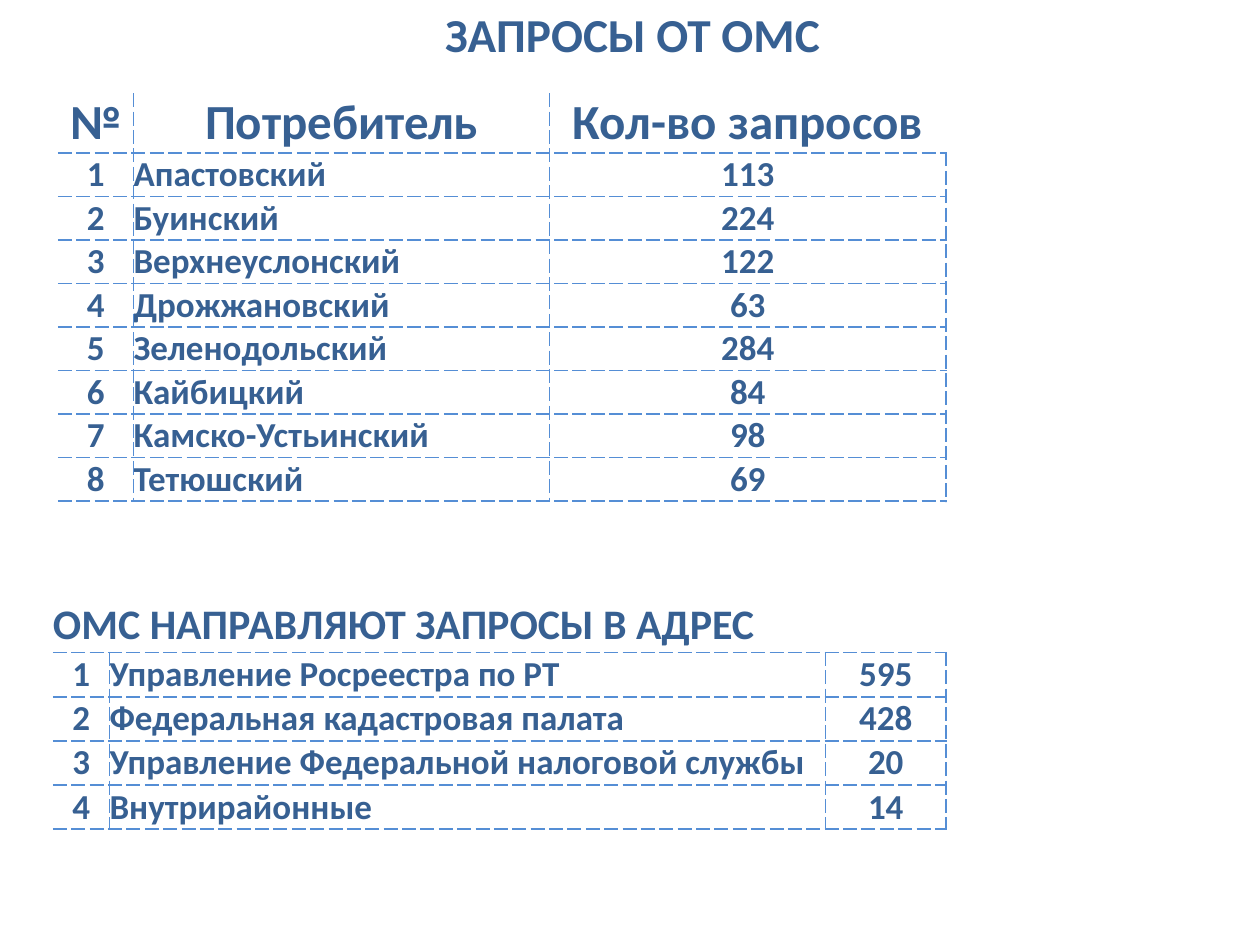
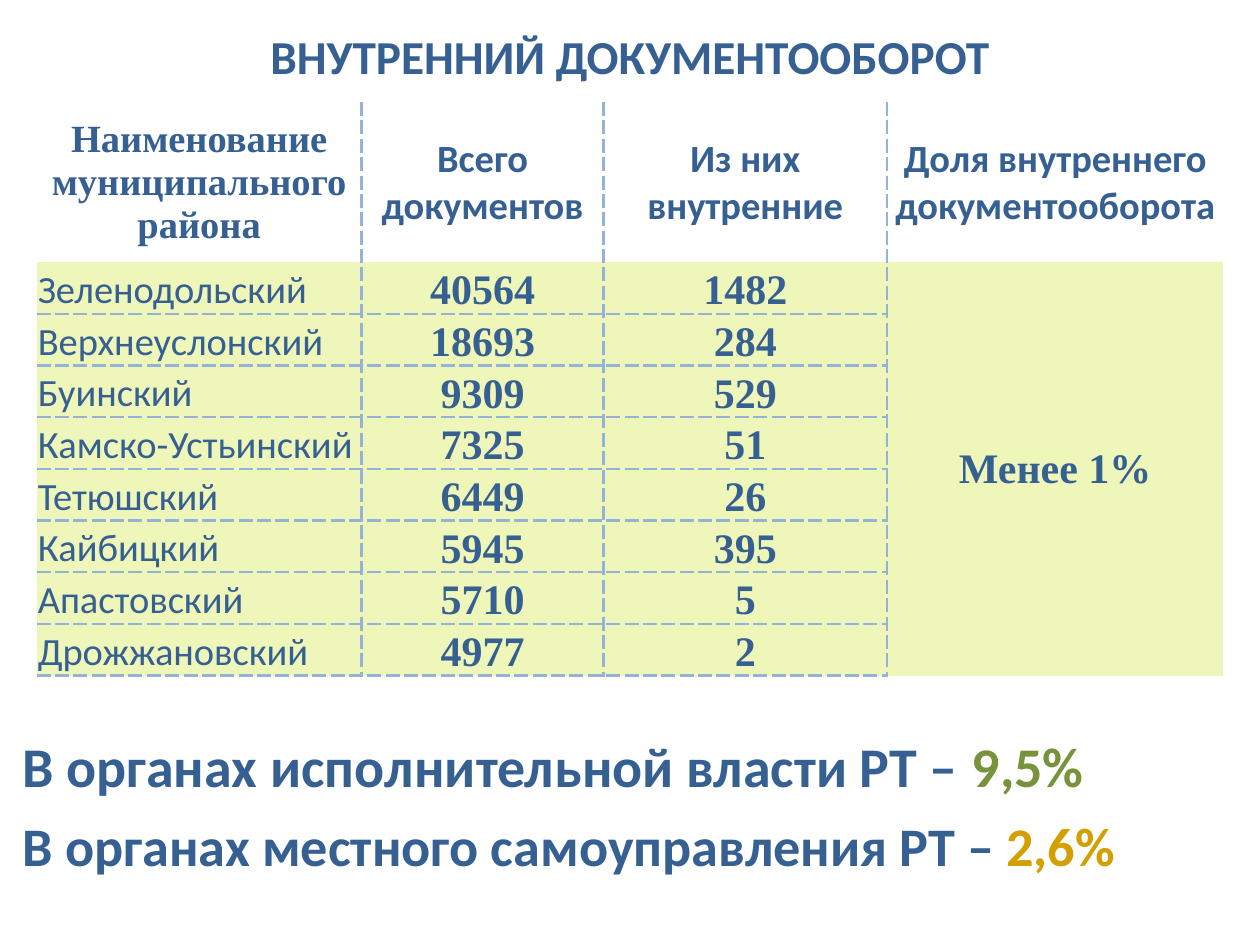
"""Two slides of municipal request and document-flow tables."""
from lxml.etree import SubElement
from pptx import Presentation
from pptx.dml.color import RGBColor as RGB
from pptx.enum.text import MSO_ANCHOR as ANCHOR, MSO_AUTO_SIZE as AUTO, PP_ALIGN as ALIGN
from pptx.oxml.ns import qn
from pptx.util import Inches, Pt

COLORS = {
    "ink": "376092", "district": "366092", "green": "77933C", "gold": "D2A000",
    "bright_rule": "558ED5", "soft_rule": "95B3D7", "white": "FFFFFF", "lime": "EEF7B9",
}
PLAIN_STYLE = "{2D5ABB26-0587-4C30-8999-92F81FD0307C}"


def write(frame, text, size=20, font="Calibri", color="ink", bold=True, align=ALIGN.LEFT):
    paragraph = frame.paragraphs[0]
    paragraph.alignment = align
    run = paragraph.add_run()
    run.text = text
    run.font.size, run.font.name, run.font.bold = Pt(size), font, bold
    run.font.color.rgb = RGB.from_string(COLORS[color])


def add_grid(slide, left, top, widths, heights, rows, formats, edges, rule, weight,
             inset=0, body_anchor=ANCHOR.MIDDLE, fills=None, merge=None):
    frame = slide.shapes.add_table(len(rows), len(widths), Inches(left), Inches(top),
                                   Inches(sum(widths)), Inches(sum(heights)))
    table = frame.table
    table.first_row = table.horz_banding = False
    table._tbl.tblPr.find(qn("a:tableStyleId")).text = PLAIN_STYLE
    for column, width in zip(table.columns, widths):
        column.width = Inches(width)
    for row, height in zip(table.rows, heights):
        row.height = Inches(height)
    if merge:
        first, last = merge
        table.cell(*first).merge(table.cell(*last))
    for r, values in enumerate(rows):
        for c, value in enumerate(values):
            cell = table.cell(r, c)
            cell.margin_left = cell.margin_top = cell.margin_right = Inches(inset)
            cell.margin_bottom = 0
            merged = cell.is_merge_origin or r == 0
            cell.vertical_anchor = ANCHOR.MIDDLE if merged else body_anchor
            for edge in edges(r, c):
                line = SubElement(cell._tc.get_or_add_tcPr(), qn(f"a:ln{edge}"), w=str(Pt(weight)))
                SubElement(SubElement(line, qn("a:solidFill")), qn("a:srgbClr"), val=COLORS[rule])
                SubElement(line, qn("a:prstDash"), val="sysDash")
            if fills:
                cell.fill.solid()
                cell.fill.fore_color.rgb = RGB.from_string(COLORS[fills[r > 0]])
            else:
                cell.fill.background()
            if not cell.is_spanned:
                write(cell.text_frame, value, **formats[r > 0][c])


deck = Presentation()
deck.slide_width, deck.slide_height = Inches(10), Inches(7.5)
requests, turnover = [deck.slides.add_slide(deck.slide_layouts[6]) for _ in range(2)]

centered = {"align": ALIGN.CENTER}
heading = {"size": 28, **centered}
consumers = [("Апастовский", 113), ("Буинский", 224), ("Верхнеуслонский", 122),
             ("Дрожжановский", 63), ("Зеленодольский", 284), ("Кайбицкий", 84),
             ("Камско-Устьинский", 98), ("Тетюшский", 69)]
add_grid(
    requests, 0.46, 0.74, [0.6, 3.3, 3.15], [0.47] + [2.76 / 8] * 8,
    [("№", "Потребитель", "Кол-во запросов")]
    + [(str(n), name, str(count)) for n, (name, count) in enumerate(consumers, 1)],
    [[heading] * 3, [centered, {"align": ALIGN.JUSTIFY}, centered]],
    lambda r, c: "L" * (c > 0) + "R" * (r > 0 or c < 2) + "T" * (r > 0) + "B",
    "bright_rule", 1)

addressees = [("Управление Росреестра по РТ", 595), ("Федеральная кадастровая палата", 428),
              ("Управление Федеральной налоговой службы", 20), ("Внутрирайонные", 14)]
add_grid(
    requests, 0.42, 4.75, [0.45, 5.68, 0.96], [0.43] + [0.35] * 4,
    [("ОМС НАПРАВЛЯЮТ ЗАПРОСЫ В АДРЕС", "", "")]
    + [(str(n), name, str(count)) for n, (name, count) in enumerate(addressees, 1)],
    [[{"size": 24}] * 3, [centered, {}, centered]],
    lambda r, c: ("L" * (c > 0) + "RTB") if r else "B",
    "bright_rule", 1, merge=((0, 0), (0, 2)))

documents = [("Зеленодольский", 40564, 1482), ("Верхнеуслонский", 18693, 284),
             ("Буинский", 9309, 529), ("Камско-Устьинский", 7325, 51), ("Тетюшский", 6449, 26),
             ("Кайбицкий", 5945, 395), ("Апастовский", 5710, 5), ("Дрожжановский", 4977, 2)]
caption = {"size": 22, **centered}
figure = {"size": 24, "font": "Times New Roman", **centered}
add_grid(
    turnover, 0.29, 0.81, [2.58, 1.92, 2.25, 2.67], [1.27] + [0.41] * 8,
    [("Наименование муниципального района", "Всего документов", "Из них внутренние",
      "Доля внутреннего документооборота")]
    + [(name, str(total), str(internal), "Менее 1%") for name, total, internal in documents],
    [[{**caption, "font": "Times New Roman"}] + [caption] * 3,
     [{"size": 22, "color": "district", "bold": False}] + [figure] * 3],
    lambda r, c: ("L" * (c > 0) + "R" * (c < 3) + "T" * (r > 1 and c < 3)
                  + "B" * (r > 0 and c < 3)),
    "soft_rule", 1.5, inset=0.01, body_anchor=ANCHOR.BOTTOM, fills=("white", "lime"),
    merge=((1, 3), (8, 3)))

title = {"size": 27, **centered}
lines = [
    (requests, (0.02, -0.01, 10, 0.56), [("ЗАПРОСЫ ОТ ОМС", title)]),
    (turnover, (0, 0.17, 10, 0.56), [("ВНУТРЕННИЙ ДОКУМЕНТООБОРОТ", title)]),
    (turnover, (0.08, 6.4, 9, 0.62), [("В органах местного самоуправления РТ – ", {"size": 31}),
                                      ("2,6%", {"size": 31, "color": "gold"})]),
    (turnover, (0.08, 5.76, 9.92, 0.64), [("В органах исполнительной власти РТ – ", {"size": 32}),
                                          ("9,5%", {"size": 32, "color": "green"})]),
]
for slide, place, parts in lines:
    frame = slide.shapes.add_textbox(*map(Inches, place)).text_frame
    frame.word_wrap = True
    frame.auto_size = AUTO.SHAPE_TO_FIT_TEXT
    for text, style in parts:
        write(frame, text, **style)

deck.save("out.pptx")
